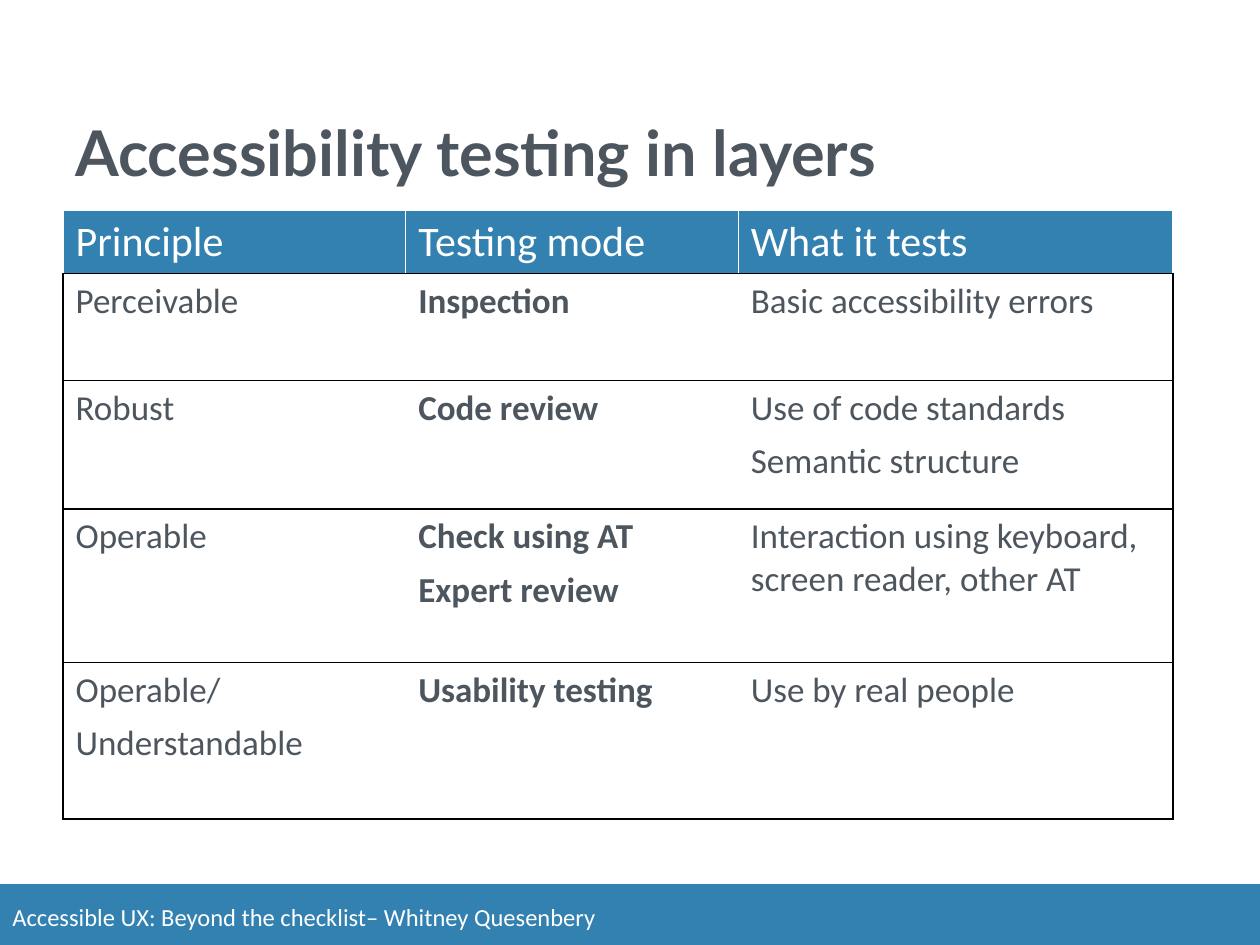
from lxml import etree
from pptx import Presentation
from pptx import util as u
from pptx.dml.color import RGBColor
from pptx.enum import shapes, text
from pptx.oxml import ns

BLUE = RGBColor(0x32, 0x81, 0xB0)
GREY = RGBColor(0x4D, 0x56, 0x5E)
WHITE = RGBColor(0xFF, 0xFF, 0xFF)
BLACK = RGBColor(0, 0, 0)

TITLE = dict(name="Lato", size=u.Pt(36), bold=True, color=GREY)
FOOTER = dict(name="Calibri", size=u.Pt(14), bold=False, color=WHITE)
HEADER = dict(name="Calibri", size=u.Pt(24), bold=False, color=WHITE)
BODY = dict(name="Calibri", size=u.Pt(20), bold=False, color=GREY)


def write(tf, lines, fmt, before=0):
    """Fill a text frame with one paragraph per line."""
    tf.word_wrap = True
    for i, line in enumerate(lines.split("\n")):
        p = tf.add_paragraph() if i else tf.paragraphs[0]
        p.space_before = u.Pt(before)
        r = p.add_run()
        r.text = line
        for key, value in fmt.items():
            if key == "color":
                r.font.color.rgb = value
            else:
                setattr(r.font, key, value)


def border(cell, side, color):
    """Draw one 1 pt cell border; call in the order L, R, T, B."""
    ln = etree.SubElement(cell._tc.get_or_add_tcPr(), ns.qn("a:ln" + side), w=str(u.Pt(1)))
    fill = etree.SubElement(ln, ns.qn("a:solidFill"))
    etree.SubElement(fill, ns.qn("a:srgbClr"), val=str(color))


prs = Presentation()
prs.slide_width, prs.slide_height = u.Inches(10), u.Inches(7.5)
s = prs.slides.add_slide(prs.slide_layouts[6])

# Footer bar
sp = s.shapes.add_shape(shapes.MSO_SHAPE.RECTANGLE, u.Inches(0), u.Inches(7.02),
                        u.Inches(10), u.Inches(0.5))
sp.shadow.inherit = False
sp.fill.solid()
sp.fill.fore_color.rgb = BLUE
sp.line.color.rgb = BLUE
sp.line.width = u.Pt(0.75)

# Footer text and title
for words, fmt, anchor, box in [
    ("Accessible UX: Beyond the checklist– Whitney Quesenbery", FOOTER,
     text.MSO_ANCHOR.TOP, (0, 7.11, 6.72, 0.34)),
    ("Accessibility testing in layers", TITLE,
     text.MSO_ANCHOR.BOTTOM, (0.5, 0.3, 9, 1.25)),
]:
    tf = s.shapes.add_textbox(*map(u.Inches, box)).text_frame
    tf.vertical_anchor = anchor
    write(tf, words, fmt)

# Table of testing layers
rows = [
    ("Principle", "Testing mode", "What it tests"),
    ("Perceivable", "Inspection", "Basic accessibility errors"),
    ("Robust", "Code review", "Use of code standards\nSemantic structure"),
    ("Operable", "Check using AT\nExpert review",
     "Interaction using keyboard, screen reader, other AT"),
    ("Operable/\nUnderstandable", "Usability testing", "Use by real people"),
]
widths = [2.72, 2.64, 3.45]
heights = [0.5, 0.85, 1.02, 1.22, 1.24]
table = s.shapes.add_table(len(rows), len(widths), u.Inches(0.5), u.Inches(1.67),
                           u.Inches(sum(widths)), u.Inches(sum(heights))).table
for col, width in zip(table.columns, widths):
    col.width = u.Inches(width)
for row, height in zip(table.rows, heights):
    row.height = u.Inches(height)

for i, row in enumerate(rows):
    for j, words in enumerate(row):
        cell = table.cell(i, j)
        head = i == 0
        fmt = HEADER if head else {**BODY, "bold": j == 1}
        write(cell.text_frame, words, fmt, before=0 if head else 6)
        # Black outline and rules below the header, white elsewhere
        border(cell, "L", BLACK if not head and j == 0 else WHITE)
        border(cell, "R", BLACK if not head and j == 2 else WHITE)
        border(cell, "T", WHITE if head else BLACK)
        border(cell, "B", BLACK)
        cell.fill.solid()
        cell.fill.fore_color.rgb = BLUE if head else WHITE

prs.save("out.pptx")
